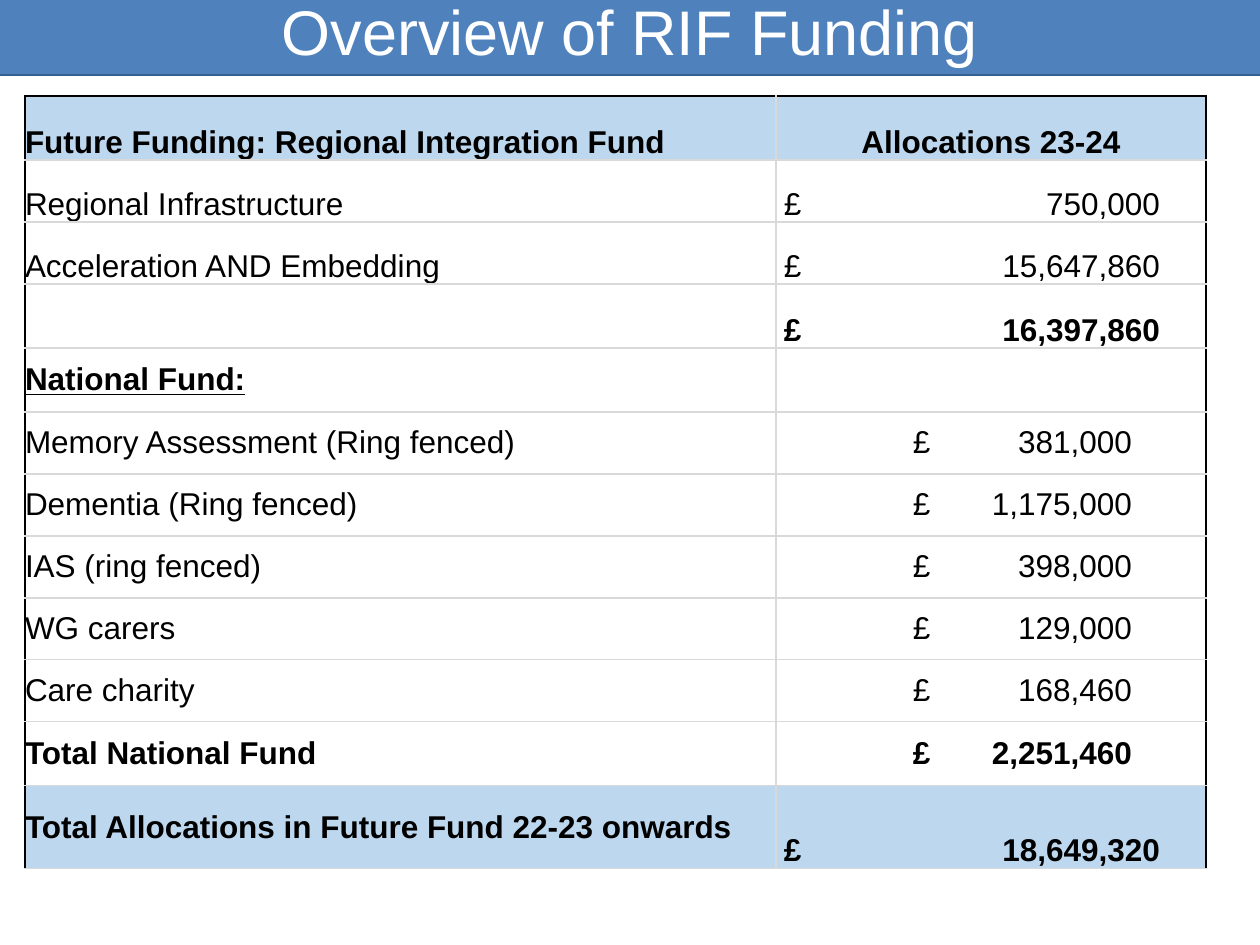
from lxml.etree import SubElement
from pptx import Presentation
from pptx.dml.color import RGBColor
from pptx.enum.shapes import MSO_SHAPE
from pptx.enum.text import MSO_ANCHOR, PP_ALIGN
from pptx.oxml.ns import qn
from pptx.util import Pt

TITLE = "Overview of RIF Funding"
HEAD = ("Future Funding: Regional Integration Fund", "Allocations 23-24")
REGION = [
    ("Regional Infrastructure", "750,000"),
    ("Acceleration AND Embedding", "15,647,860"),
    ("", "16,397,860"),
]
NATION = [
    ("National Fund:", ""),
    ("Memory Assessment (Ring fenced)", "381,000"),
    ("Dementia (Ring fenced)", "1,175,000"),
    ("IAS (ring fenced)", "398,000"),
    ("WG carers", "129,000"),
    ("Care charity", "168,460"),
    ("Total National Fund", "2,251,460"),
]
TOTAL = ("Total Allocations in Future Fund 22-23 onwards", "18,649,320")
ROWS = [HEAD, *REGION, *NATION, TOTAL]
LAST = len(ROWS) - 1
SPLIT = 1 + len(REGION)  # first row of the national part
BOLD = {0, SPLIT - 1, SPLIT, LAST - 1, LAST}

COLORS = {"bar": "4F81BD", "edge": "376092", "band": "BDD7EE",
          "grid": "D9D9D9", "black": "000000", "white": "FFFFFF"}
FONT = "Arial"
COLS = (751, 430)
PLAIN, STRONG, FOOT = 62, 64, 83
WIDE = (8, 376)  # indent of the pound sign, tab of the amount
NARROW = (137, 219)


def px(n):
    return round(n * 914400 / 126)


def rgb(name):
    return RGBColor.from_string(COLORS[name])


def style(para, size, color, bold=False):
    font = para.font
    font.name, font.size, font.bold = FONT, Pt(size), bold
    font.color.rgb = rgb(color)


def add_tab(para, pos):
    tabs = SubElement(para._p.get_or_add_pPr(), qn("a:tabLst"))
    SubElement(tabs, qn("a:tab"), pos=str(px(pos)), algn="r")


def paint(cell, fill, sides):
    """Draw the borders (left, right, top, bottom) and fill of a cell."""
    props = cell._tc.get_or_add_tcPr()
    for side, color in zip("LRTB", sides):
        line = SubElement(props, qn(f"a:ln{side}"), w=str(Pt(1)))
        solid = SubElement(line, qn("a:solidFill"))
        SubElement(solid, qn("a:srgbClr"), val=COLORS[color])
    cell.fill.solid()
    cell.fill.fore_color.rgb = rgb(fill)


def add_bar(slide):
    bar = slide.shapes.add_shape(
        MSO_SHAPE.RECTANGLE, px(-15), px(-14), px(1290), px(89))
    bar.shadow.inherit = False
    bar.fill.solid()
    bar.fill.fore_color.rgb = rgb("bar")
    bar.line.color.rgb = rgb("edge")
    bar.line.width = Pt(0.75)
    para = bar.text_frame.paragraphs[0]
    para.text = TITLE
    para.alignment = PP_ALIGN.CENTER
    style(para, 36, "white")


def fill_cell(cell, row, col, text):
    cell.margin_left = cell.margin_right = 0
    cell.margin_top = cell.margin_bottom = 0
    low = row < SPLIT or (row == LAST and col == 1)
    cell.vertical_anchor = MSO_ANCHOR.BOTTOM if low else MSO_ANCHOR.MIDDLE
    para = cell.text_frame.paragraphs[0]
    if col == 1 and row == 0:
        para.alignment = PP_ALIGN.CENTER
    elif col == 1 and text:
        inset, tab = NARROW if SPLIT <= row < LAST else WIDE
        cell.margin_left = px(inset)
        add_tab(para, tab)
        text = f"£\t{text}"
    para.text = text
    style(para, 18, "black", row in BOLD)
    if col == 0 and row == SPLIT:
        para.font.underline = True
    sides = ("black" if col == 0 else "grid", "black" if col == 1 else "grid",
             "black" if row == 0 else "grid", "grid")
    paint(cell, "band" if row in (0, LAST) else "white", sides)


def add_grid(slide):
    tall = [STRONG if r in BOLD else PLAIN for r in range(LAST)] + [FOOT]
    table = slide.shapes.add_table(
        len(ROWS), len(COLS), px(25), px(96), px(sum(COLS)), px(sum(tall))).table
    for col, width in zip(table.columns, COLS):
        col.width = px(width)
    for r, (texts, high) in enumerate(zip(ROWS, tall)):
        table.rows[r].height = px(high)
        for c, text in enumerate(texts):
            fill_cell(table.cell(r, c), r, c, text)


def main():
    deck = Presentation()
    deck.slide_width, deck.slide_height = px(1260), px(945)
    slide = deck.slides.add_slide(deck.slide_layouts[6])
    add_bar(slide)
    add_grid(slide)
    deck.save("out.pptx")


if __name__ == "__main__":
    main()
